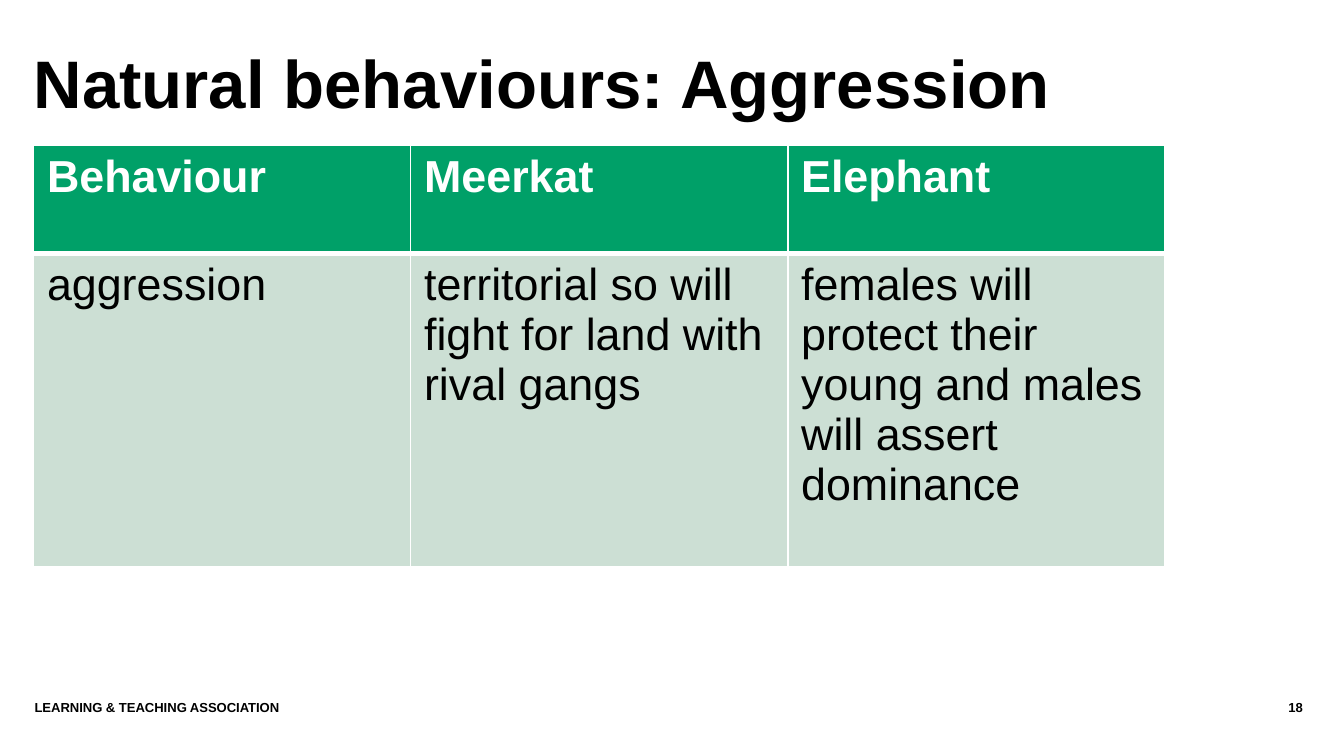
from lxml.etree import SubElement
from pptx import Presentation
from pptx.dml.color import RGBColor
from pptx.enum.text import MSO_ANCHOR, PP_ALIGN
from pptx.oxml.ns import qn
from pptx.util import Pt

COLOURS = {"text": "000000", "white": "FFFFFF", "header": "00A068", "body": "CCDFD4"}
FONT = "Arial"
COLUMN_WIDTH = 202
ROW_HEIGHTS = (57.6, 168)
ROWS = (
    ("Behaviour", "Meerkat", "Elephant"),
    (
        "aggression",
        "territorial so will fight for land with rival gangs",
        "females will protect their young and males will assert dominance",
    ),
)


def format_text(text_frame, size, colour="text", bold=True, alignment=PP_ALIGN.LEFT):
    for paragraph in text_frame.paragraphs:
        paragraph.alignment = alignment
        for run in paragraph.runs:
            run.font.name = FONT
            run.font.size = Pt(size)
            run.font.bold = bold
            run.font.color.rgb = RGBColor.from_string(COLOURS[colour])


def clear_margins(text_frame):
    text_frame.margin_left = text_frame.margin_right = 0
    text_frame.margin_top = text_frame.margin_bottom = 0
    text_frame.word_wrap = True


def add_title(slide, text):
    title = slide.shapes.title
    title.left, title.top, title.width, title.height = Pt(18), Pt(19.5), Pt(664.5), Pt(54.5)
    text_frame = title.text_frame
    clear_margins(text_frame)
    text_frame.vertical_anchor = MSO_ANCHOR.MIDDLE
    text_frame.text = text
    text_frame.paragraphs[0].line_spacing = 0.9
    format_text(text_frame, 36)


def add_footer(slide, text, left, width, alignment=PP_ALIGN.LEFT):
    box = slide.shapes.add_textbox(Pt(left), Pt(375), Pt(width), Pt(21.6))
    clear_margins(box.text_frame)
    box.text_frame.text = text
    format_text(box.text_frame, 7, alignment=alignment)


def set_borders(cell, widths):
    """Draw white borders; widths maps each side (L, R, T, B) to points."""
    properties = cell._tc.get_or_add_tcPr()
    for position, (side, width) in enumerate(widths.items()):
        line = properties.makeelement(qn(f"a:ln{side}"), {"w": str(Pt(width))})
        fill = SubElement(line, qn("a:solidFill"))
        SubElement(fill, qn("a:srgbClr"), val=COLOURS["white"])
        properties.insert(position, line)


def add_behaviour_table(slide):
    column_count = len(ROWS[0])
    frame = slide.shapes.add_table(
        len(ROWS), column_count, Pt(18), Pt(78),
        Pt(COLUMN_WIDTH * column_count), Pt(sum(ROW_HEIGHTS)),
    )
    table = frame.table
    for column in table.columns:
        column.width = Pt(COLUMN_WIDTH)
    for row_index, texts in enumerate(ROWS):
        table.rows[row_index].height = Pt(ROW_HEIGHTS[row_index])
        is_header = row_index == 0
        for column_index, text in enumerate(texts):
            cell = table.cell(row_index, column_index)
            cell.text = text
            format_text(cell.text_frame, 24, "white" if is_header else "text", is_header)
            cell.fill.solid()
            fill_colour = COLOURS["header" if is_header else "body"]
            cell.fill.fore_color.rgb = RGBColor.from_string(fill_colour)
            top, bottom = (1, 3) if is_header else (3, 1)
            set_borders(cell, {"L": 1, "R": 1, "T": top, "B": bottom})


def main():
    presentation = Presentation()
    presentation.slide_width, presentation.slide_height = Pt(720), Pt(405)
    slide = presentation.slides.add_slide(presentation.slide_layouts[5])
    add_footer(slide, "LEARNING & TEACHING ASSOCIATION", 18.5, 605.5)
    add_footer(slide, "18", 626.5, 71.5, PP_ALIGN.RIGHT)
    add_title(slide, "Natural behaviours: Aggression")
    add_behaviour_table(slide)
    presentation.save("out.pptx")


if __name__ == "__main__":
    main()
